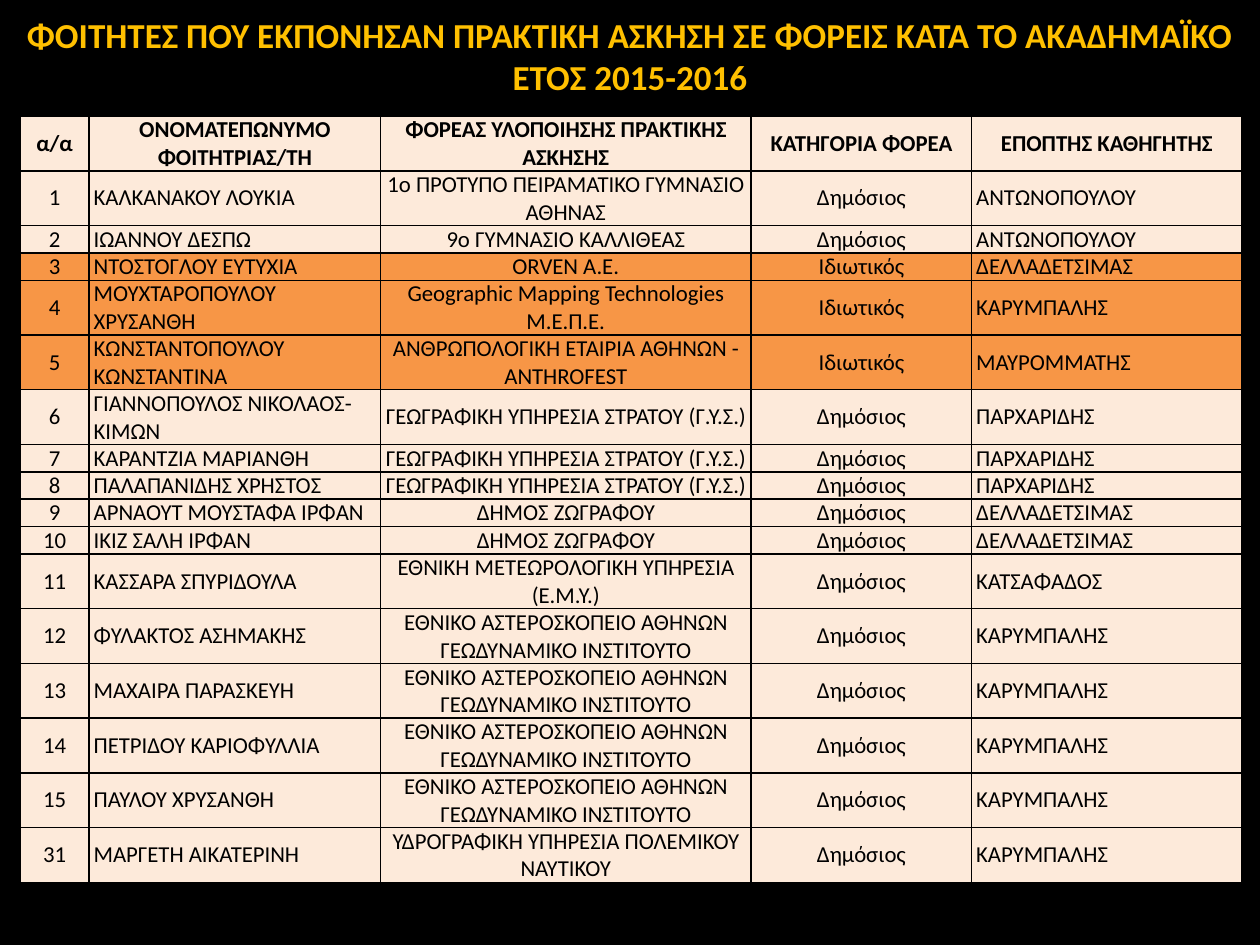
from dataclasses import dataclass

from lxml import etree
from pptx import Presentation
from pptx.dml.color import RGBColor
from pptx.enum import text
from pptx.oxml import ns
from pptx.util import Cm, Pt


@dataclass(frozen=True)
class Theme:
    font: str = "Calibri"
    background: str = "000000"
    title: str = "FFC000"
    ink: str = "000000"
    public: str = "FDEADA"
    private: str = "F79646"
    title_size: float = 20
    table_size: float = 13
    border_width: float = 1


THEME = Theme()
CENTER, LEFT = text.PP_ALIGN.CENTER, text.PP_ALIGN.LEFT

TITLE = "ΦΟΙΤΗΤΕΣ ΠΟΥ ΕΚΠΟΝΗΣΑΝ ΠΡΑΚΤΙΚΗ ΑΣΚΗΣΗ ΣΕ ΦΟΡΕΙΣ ΚΑΤΑ ΤΟ ΑΚΑΔΗΜΑΪΚΟ ΕΤΟΣ 2015-2016"
HEADINGS = (
    "α/α",
    "ΟΝΟΜΑΤΕΠΩΝΥΜΟ ΦΟΙΤΗΤΡΙΑΣ/ΤΗ",
    "ΦΟΡΕΑΣ ΥΛΟΠΟΙΗΣΗΣ ΠΡΑΚΤΙΚΗΣ ΑΣΚΗΣΗΣ",
    "ΚΑΤΗΓΟΡΙΑ ΦΟΡΕΑ",
    "ΕΠΟΠΤΗΣ ΚΑΘΗΓΗΤΗΣ",
)
COLUMN_WIDTHS = (1.4, 5.87, 7.47, 4.45, 5.44)
COLUMN_ALIGNS = (CENTER, LEFT, CENTER, CENTER, LEFT)
LINE_HEIGHT = 0.55

PUBLIC, PRIVATE = "Δημόσιος", "Ιδιωτικός"
ARMY = "ΓΕΩΓΡΑΦΙΚΗ ΥΠΗΡΕΣΙΑ ΣΤΡΑΤΟΥ (Γ.Υ.Σ.)"
ZOGRAFOU = "ΔΗΜΟΣ ΖΩΓΡΑΦΟΥ"
OBSERVATORY = "ΕΘΝΙΚΟ ΑΣΤΕΡΟΣΚΟΠΕΙΟ ΑΘΗΝΩΝ ΓΕΩΔΥΝΑΜΙΚΟ ΙΝΣΤΙΤΟΥΤΟ"
ANTONOPOULOU, DELLADETSIMAS = "ΑΝΤΩΝΟΠΟΥΛΟΥ", "ΔΕΛΛΑΔΕΤΣΙΜΑΣ"
KARYMPALIS, PARCHARIDIS = "ΚΑΡΥΜΠΑΛΗΣ", "ΠΑΡΧΑΡΙΔΗΣ"

STUDENTS = (
    ("1", "ΚΑΛΚΑΝΑΚΟΥ ΛΟΥΚΙΑ", "1ο ΠΡΟΤΥΠΟ ΠΕΙΡΑΜΑΤΙΚΟ ΓΥΜΝΑΣΙΟ ΑΘΗΝΑΣ", PUBLIC, ANTONOPOULOU),
    ("2", "ΙΩΑΝΝΟΥ ΔΕΣΠΩ", "9ο ΓΥΜΝΑΣΙΟ ΚΑΛΛΙΘΕΑΣ", PUBLIC, ANTONOPOULOU),
    ("3", "ΝΤΟΣΤΟΓΛΟΥ ΕΥΤΥΧΙΑ", "ORVEN A.E.", PRIVATE, DELLADETSIMAS),
    ("4", "ΜΟΥΧΤΑΡΟΠΟΥΛΟΥ ΧΡΥΣΑΝΘΗ", "Geographic Mapping Technologies Μ.Ε.Π.Ε.", PRIVATE, KARYMPALIS),
    ("5", "ΚΩΝΣΤΑΝΤΟΠΟΥΛΟΥ ΚΩΝΣΤΑΝΤΙΝΑ", "ΑΝΘΡΩΠΟΛΟΓΙΚΗ ΕΤΑΙΡΙΑ ΑΘΗΝΩΝ - ANTHROFEST",
     PRIVATE, "ΜΑΥΡΟΜΜΑΤΗΣ"),
    ("6", "ΓΙΑΝΝΟΠΟΥΛΟΣ ΝΙΚΟΛΑΟΣ-ΚΙΜΩΝ", ARMY, PUBLIC, PARCHARIDIS),
    ("7", "ΚΑΡΑΝΤΖΙΑ ΜΑΡΙΑΝΘΗ", ARMY, PUBLIC, PARCHARIDIS),
    ("8", "ΠΑΛΑΠΑΝΙΔΗΣ ΧΡΗΣΤΟΣ", ARMY, PUBLIC, PARCHARIDIS),
    ("9", "ΑΡΝΑΟΥΤ ΜΟΥΣΤΑΦΑ ΙΡΦΑΝ", ZOGRAFOU, PUBLIC, DELLADETSIMAS),
    ("10", "ΙΚΙΖ ΣΑΛΗ ΙΡΦΑΝ", ZOGRAFOU, PUBLIC, DELLADETSIMAS),
    ("11", "ΚΑΣΣΑΡΑ ΣΠΥΡΙΔΟΥΛΑ", "ΕΘΝΙΚΗ ΜΕΤΕΩΡΟΛΟΓΙΚΗ ΥΠΗΡΕΣΙΑ (Ε.Μ.Υ.)", PUBLIC, "ΚΑΤΣΑΦΑΔΟΣ"),
    ("12", "ΦΥΛΑΚΤΟΣ ΑΣΗΜΑΚΗΣ", OBSERVATORY, PUBLIC, KARYMPALIS),
    ("13", "ΜΑΧΑΙΡΑ ΠΑΡΑΣΚΕΥΗ", OBSERVATORY, PUBLIC, KARYMPALIS),
    ("14", "ΠΕΤΡΙΔΟΥ ΚΑΡΙΟΦΥΛΛΙΑ", OBSERVATORY, PUBLIC, KARYMPALIS),
    ("15", "ΠΑΥΛΟΥ ΧΡΥΣΑΝΘΗ", OBSERVATORY, PUBLIC, KARYMPALIS),
    ("31", "ΜΑΡΓΕΤΗ ΑΙΚΑΤΕΡΙΝΗ", "ΥΔΡΟΓΡΑΦΙΚΗ ΥΠΗΡΕΣΙΑ ΠΟΛΕΜΙΚΟΥ ΝΑΥΤΙΚΟΥ", PUBLIC, KARYMPALIS),
)
SINGLE_LINE_ROWS = {"2", "3", "7", "8", "9", "10"}


def add_run(paragraph, wording, size, color, align, bold=False):
    paragraph.alignment = align
    run = paragraph.add_run()
    run.text = wording
    run.font.name = THEME.font
    run.font.size = Pt(size)
    run.font.bold = bold
    run.font.color.rgb = RGBColor.from_string(color)


def add_title(slide):
    title = slide.shapes.add_textbox(Cm(0), Cm(0.15), Cm(25.4), Cm(1.37))
    title.text_frame.word_wrap = True
    add_run(title.text_frame.paragraphs[0], TITLE, THEME.title_size, THEME.title, CENTER, True)


def add_borders(cell):
    properties = cell._tc.get_or_add_tcPr()
    for position, side in enumerate(("lnL", "lnR", "lnT", "lnB")):
        line = etree.Element(ns.qn(f"a:{side}"), w=str(Pt(THEME.border_width)))
        fill = etree.SubElement(line, ns.qn("a:solidFill"))
        etree.SubElement(fill, ns.qn("a:srgbClr"), val=THEME.ink)
        properties.insert(position, line)


def fill_cell(cell, wording, align, color, bold):
    cell.margin_left = cell.margin_right = Cm(0.09)
    cell.margin_top = cell.margin_bottom = Cm(0)
    cell.vertical_anchor = text.MSO_ANCHOR.MIDDLE
    cell.fill.solid()
    cell.fill.fore_color.rgb = RGBColor.from_string(color)
    add_run(cell.text_frame.paragraphs[0], wording, THEME.table_size, THEME.ink, align, bold)
    add_borders(cell)


def add_placements(slide):
    records = (HEADINGS, *STUDENTS)
    heights = [LINE_HEIGHT * (1 if record[0] in SINGLE_LINE_ROWS else 2) for record in records]
    placements = slide.shapes.add_table(
        len(records), len(HEADINGS), Cm(0.4), Cm(2.34), Cm(sum(COLUMN_WIDTHS)), Cm(sum(heights))
    ).table
    for column, width in zip(placements.columns, COLUMN_WIDTHS):
        column.width = Cm(width)
    for row, record, height in zip(placements.rows, records, heights):
        row.height = Cm(height)
        heading = record is HEADINGS
        color = THEME.private if PRIVATE in record else THEME.public
        for cell, wording, align in zip(row.cells, record, COLUMN_ALIGNS):
            fill_cell(cell, wording, CENTER if heading else align, color, heading)


def main():
    deck = Presentation()
    deck.slide_width, deck.slide_height = Cm(25.4), Cm(19.05)
    slide = deck.slides.add_slide(deck.slide_layouts[6])
    slide.background.fill.solid()
    slide.background.fill.fore_color.rgb = RGBColor.from_string(THEME.background)
    add_title(slide)
    add_placements(slide)
    deck.save("out.pptx")


if __name__ == "__main__":
    main()
